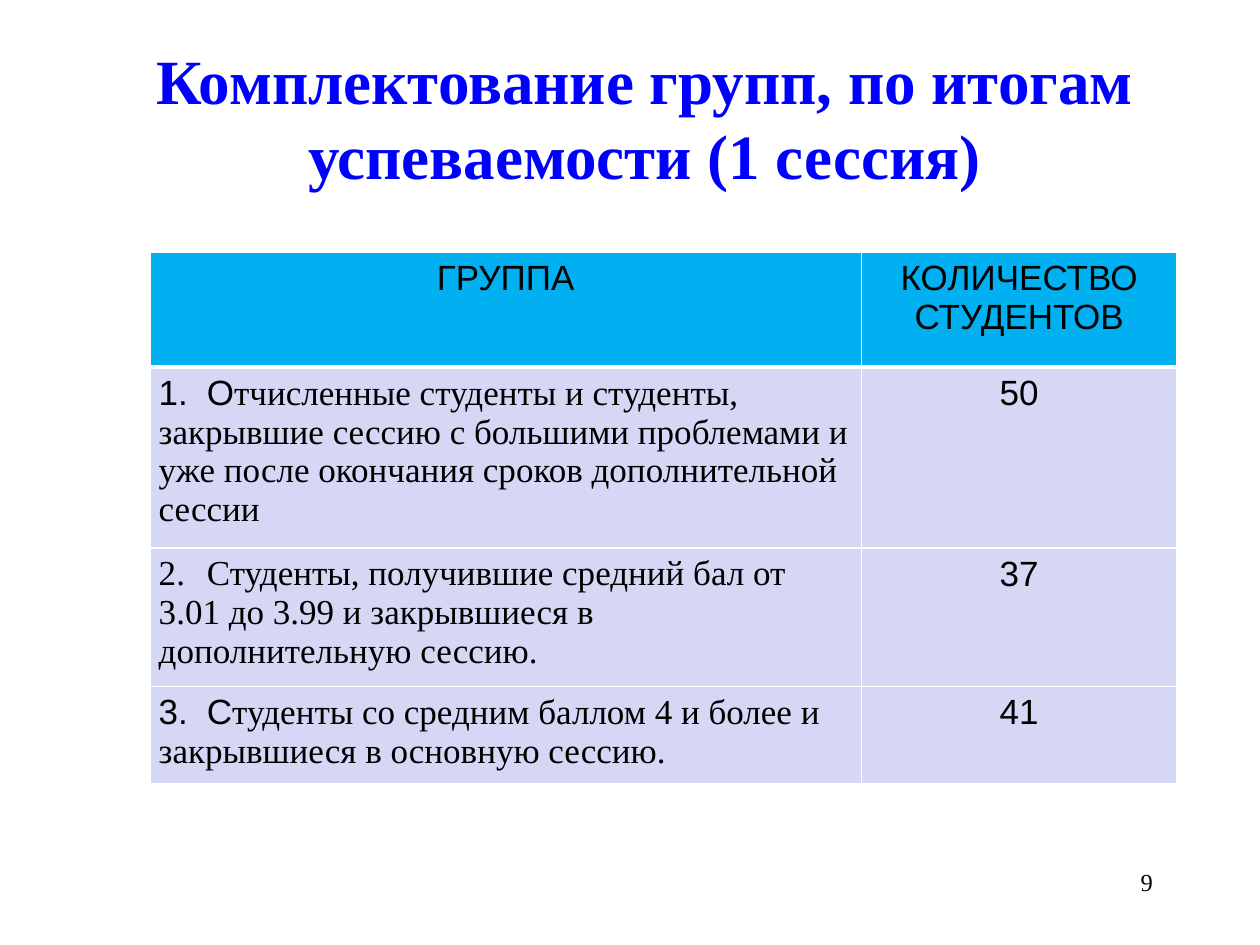
from dataclasses import dataclass

from lxml import etree
from pptx import Presentation
from pptx import util as u
from pptx.dml.color import RGBColor
from pptx.enum import text
from pptx.oxml import ns


@dataclass(frozen=True)
class Theme:
    heading: str = "0000FF"
    ink: str = "000000"
    header_fill: str = "00B0F0"
    body_fill: str = "D6D6F5"
    border: str = "FFFFFF"
    serif: str = "Times New Roman"
    sans: str = "Arial"
    title_size: int = 36
    table_size: int = 20
    number_size: int = 14


@dataclass(frozen=True)
class Group:
    """A table row: sans-serif lead, serif description, student count."""
    lead: str
    description: str
    count: str
    height: float


THEME = Theme()
CENTER = text.PP_ALIGN.CENTER
HEADINGS = ("ГРУППА", "КОЛИЧЕСТВО СТУДЕНТОВ")
HEADER_HEIGHT = 2.32
COLUMN_WIDTHS = (14.35, 6.35)
NUMBER_TAB = 0.97
GROUPS = (
    Group("1.\tО", "тчисленные студенты и студенты, закрывшие сессию с большими "
          "проблемами и уже после окончания сроков дополнительной сессии", "50", 3.65),
    Group("", "2.\tСтуденты, получившие средний бал от 3.01 до 3.99 и закрывшиеся "
          "в дополнительную сессию.", "37", 2.79),
    Group("3.\tС", "туденты со средним баллом 4 и более и закрывшиеся в основную "
          "сессию.", "41", 1.96),
)


def add_span(para, words: str, font: str, size: int,
             color: str = THEME.ink, bold: bool = False) -> None:
    span = para.add_run()
    span.text = words
    span.font.name = font
    span.font.size = u.Pt(size)
    span.font.bold = bold
    span.font.color.rgb = RGBColor.from_string(color)


def add_tab_stop(para, position: float) -> None:
    tabs = etree.SubElement(para._p.get_or_add_pPr(), ns.qn("a:tabLst"))
    etree.SubElement(tabs, ns.qn("a:tab"), pos=str(u.Cm(position)), algn="l")


def set_borders(cell, top: int, bottom: int) -> None:
    """Draw the cell's edges, with widths in points; they precede the fill."""
    properties = cell._tc.get_or_add_tcPr()
    edges = (("L", 1), ("R", 1), ("T", top), ("B", bottom))
    for index, (side, width) in enumerate(edges):
        line = etree.Element(ns.qn(f"a:ln{side}"), w=str(u.Pt(width)))
        fill = etree.SubElement(line, ns.qn("a:solidFill"))
        etree.SubElement(fill, ns.qn("a:srgbClr"), val=THEME.border)
        properties.insert(index, line)


def style_cell(cell, row: int) -> None:
    cell.margin_left = cell.margin_right = u.Cm(0.18)
    cell.margin_top = cell.margin_bottom = u.Cm(0.13)
    cell.fill.solid()
    color = THEME.body_fill if row else THEME.header_fill
    cell.fill.fore_color.rgb = RGBColor.from_string(color)
    set_borders(cell, top=3 if row == 1 else 1, bottom=1 if row else 3)


def write_centered(cell, words: str) -> None:
    para = cell.text_frame.paragraphs[0]
    para.alignment = CENTER
    add_span(para, words, THEME.sans, THEME.table_size)


def write_group(cell, group: Group) -> None:
    para = cell.text_frame.paragraphs[0]
    add_tab_stop(para, NUMBER_TAB)
    if group.lead:
        add_span(para, group.lead, THEME.sans, THEME.table_size)
    add_span(para, group.description, THEME.serif, THEME.table_size)


def add_group_table(page) -> None:
    heights = (HEADER_HEIGHT, *(group.height for group in GROUPS))
    table = page.shapes.add_table(
        len(heights), len(COLUMN_WIDTHS), u.Cm(3.02), u.Cm(5.08),
        u.Cm(sum(COLUMN_WIDTHS)), u.Cm(sum(heights))).table
    for column, width in zip(table.columns, COLUMN_WIDTHS):
        column.width = u.Cm(width)
    for index, height in enumerate(heights):
        table.rows[index].height = u.Cm(height)
        for cell in table.rows[index].cells:
            style_cell(cell, index)
    for column, heading in enumerate(HEADINGS):
        write_centered(table.cell(0, column), heading)
    for row, group in enumerate(GROUPS, start=1):
        write_group(table.cell(row, 0), group)
        write_centered(table.cell(row, 1), group.count)


def fill_title(page) -> None:
    title = page.shapes.title
    title.left, title.top = u.Cm(2.72), u.Cm(0.69)
    title.width, title.height = u.Cm(20.55), u.Cm(3.33)
    frame = title.text_frame
    frame.word_wrap = True
    frame.auto_size = text.MSO_AUTO_SIZE.NONE
    frame.vertical_anchor = text.MSO_ANCHOR.MIDDLE
    para = frame.paragraphs[0]
    para.alignment = CENTER
    add_span(para, "Комплектование групп, по итогам успеваемости (1 сессия)",
             THEME.serif, THEME.title_size, THEME.heading, bold=True)


def add_page_number(page, number: str) -> None:
    box = page.shapes.add_textbox(u.Cm(18.21), u.Cm(17.35), u.Cm(5.28), u.Cm(1.27))
    box.text_frame.word_wrap = True
    para = box.text_frame.paragraphs[0]
    para.alignment = text.PP_ALIGN.RIGHT
    add_span(para, number, THEME.serif, THEME.number_size)


def main() -> None:
    deck = Presentation()
    deck.slide_width, deck.slide_height = u.Cm(25.4), u.Cm(19.05)
    page = deck.slides.add_slide(deck.slide_layouts.get_by_name("Title Only"))
    fill_title(page)
    add_group_table(page)
    add_page_number(page, "9")
    deck.save("out.pptx")


if __name__ == "__main__":
    main()
